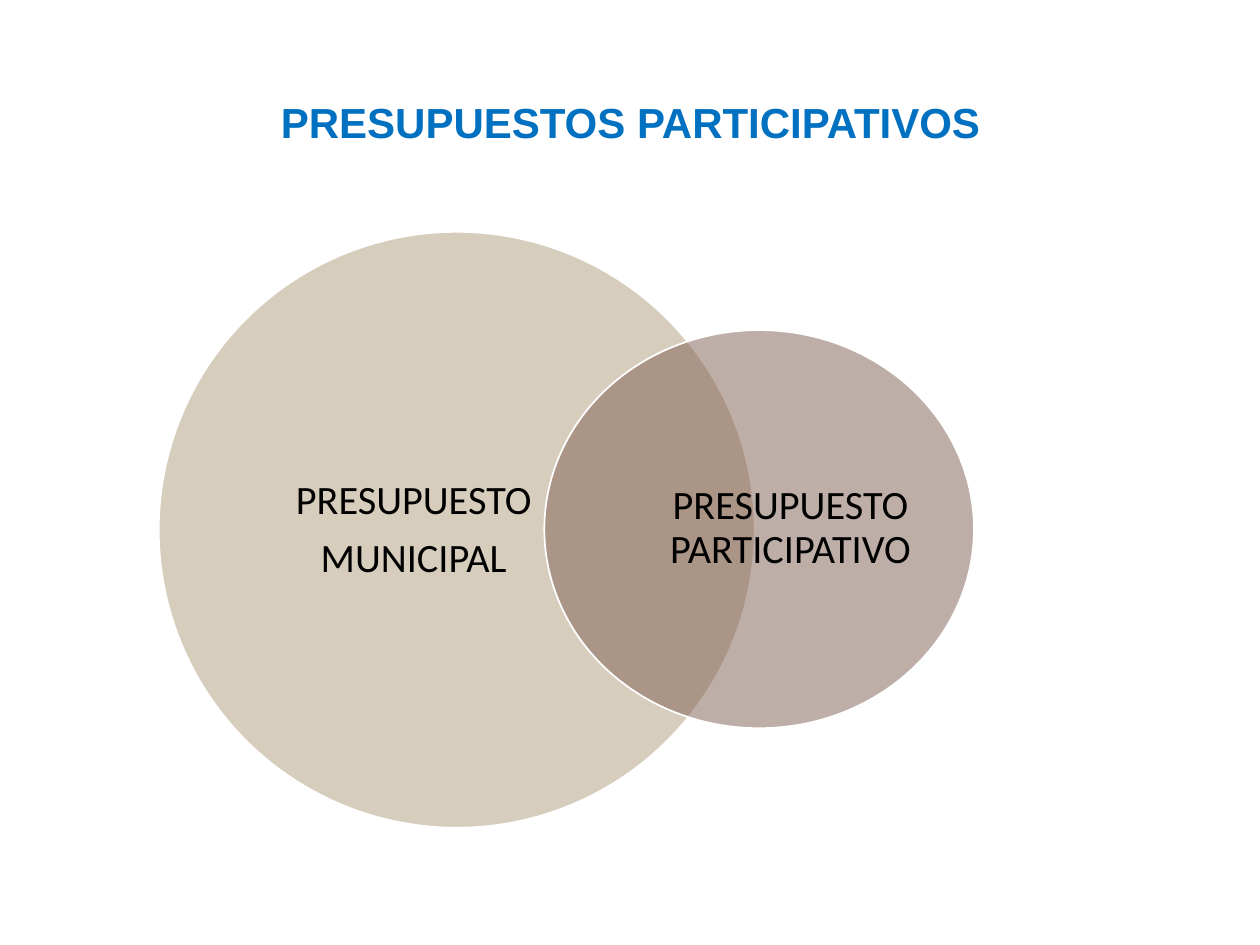
from lxml import etree
from pptx import Presentation
from pptx.dml.color import RGBColor
from pptx.enum.shapes import MSO_SHAPE
from pptx.enum.text import MSO_ANCHOR, PP_ALIGN
from pptx.oxml.ns import qn
from pptx.util import Inches, Pt

ELLIPSE = MSO_SHAPE.OVAL
MIDDLE = MSO_ANCHOR.MIDDLE
CENTER = PP_ALIGN.CENTER

COLORS = {
    "title": "0070C0",
    "text": "000000",
    "outline": "FFFFFF",
    "municipal": "B19C7D",
    "participatory": "7F5F52",
}


class SlideBuilder:
    heading_font = "Arial"
    label_font = "Calibri"
    line_spacing = 0.9

    def __init__(self, slide):
        self.slide = slide

    def color(self, name):
        return RGBColor.from_string(COLORS[name])

    def text(self, box, lines, font, size, color, bold=False, space_after=0):
        shape = self.slide.shapes.add_textbox(*map(Inches, box))
        frame = shape.text_frame
        frame.word_wrap = True
        frame.vertical_anchor = MIDDLE
        frame.margin_left = frame.margin_right = 0
        frame.margin_top = frame.margin_bottom = 0
        frame.text = "\n".join(lines)
        for paragraph in frame.paragraphs:
            paragraph.alignment = CENTER
            paragraph.line_spacing = self.line_spacing
            paragraph.space_after = Pt(space_after)
            paragraph.font.name = font
            paragraph.font.size = Pt(size)
            paragraph.font.bold = bold
            paragraph.font.color.rgb = self.color(color)

    def title(self, box, line):
        self.text(box, [line], self.heading_font, 24, "title", bold=True)

    def label(self, box, lines):
        self.text(box, lines, self.label_font, 23, "text", space_after=8)

    def circle(self, box, color, opacity=50):
        shape = self.slide.shapes.add_shape(ELLIPSE, *map(Inches, box))
        shape.shadow.inherit = False
        shape.fill.solid()
        shape.fill.fore_color.rgb = self.color(color)
        shape.line.color.rgb = self.color("outline")
        shape.line.width = Pt(1)
        fill_color = shape.fill._xPr.find(qn("a:solidFill"))[0]
        etree.SubElement(fill_color, qn("a:alpha"), val=str(opacity * 1000))


def main():
    presentation = Presentation()
    presentation.slide_width = Inches(10)
    presentation.slide_height = Inches(7.5)
    builder = SlideBuilder(presentation.slides.add_slide(presentation.slide_layouts[6]))

    builder.title((1.42, 0.16, 7.17, 1.67), "PRESUPUESTOS PARTICIPATIVOS")
    builder.circle((1.26, 1.84, 4.73, 4.73), "municipal")
    builder.label((1.92, 2.4, 2.73, 3.62), ["PRESUPUESTO", "MUNICIPAL"])
    builder.circle((4.32, 2.62, 3.41, 3.16), "participatory")
    builder.label((5.29, 2.99, 1.97, 2.41), ["PRESUPUESTO PARTICIPATIVO"])

    presentation.save("out.pptx")


if __name__ == "__main__":
    main()
